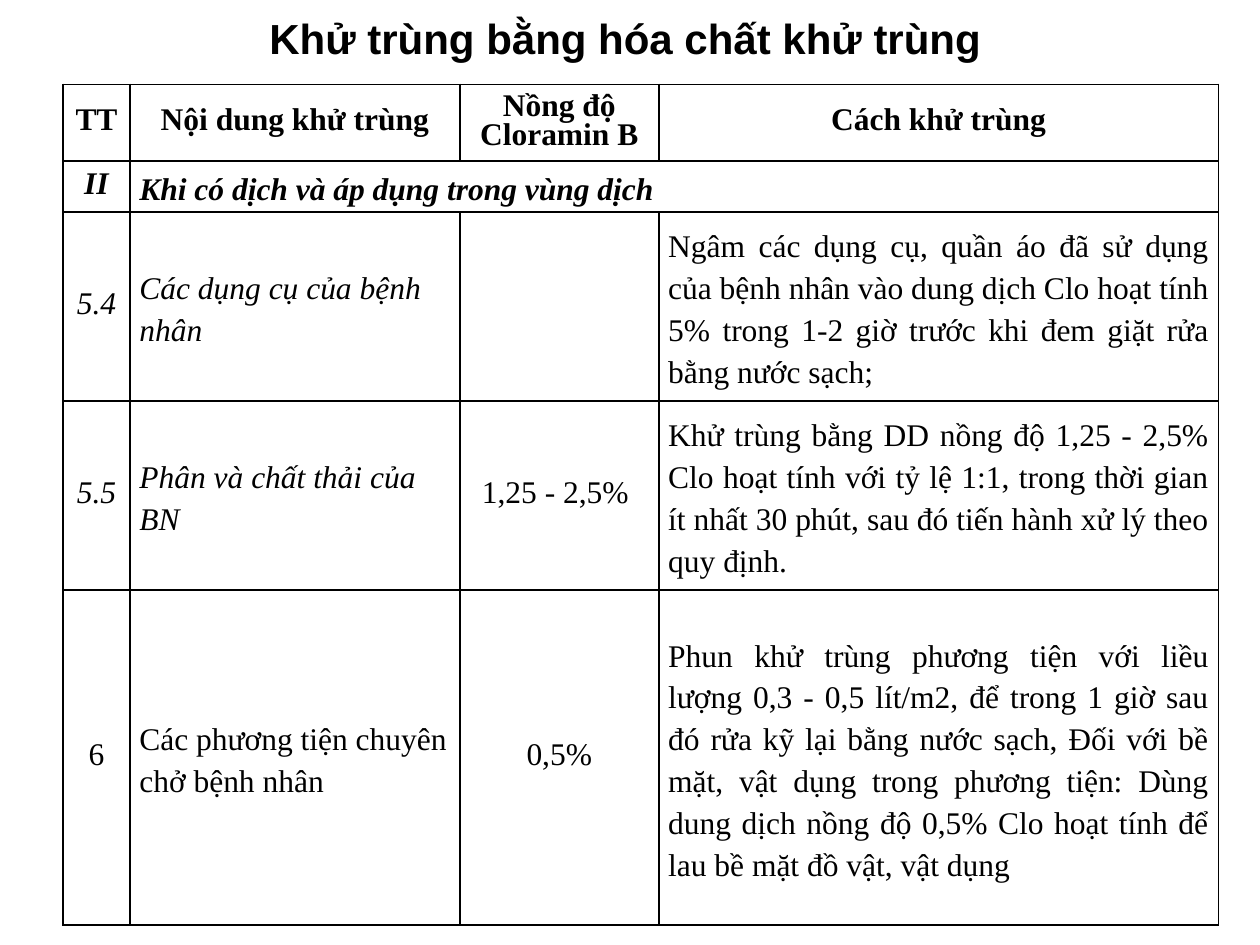
import dataclasses
import typing

import pptx
import pptx.dml.color
import pptx.enum.text
import pptx.oxml
import pptx.oxml.ns
import pptx.presentation
import pptx.slide
import pptx.table
import pptx.text.text
import pptx.util

Cm = pptx.util.Cm
Pt = pptx.util.Pt
Align = pptx.enum.text.PP_ALIGN
Anchor = pptx.enum.text.MSO_ANCHOR

BLACK = "000000"
WHITE = "FFFFFF"
COLUMN_WIDTHS = (1.35, 6.65, 4.01, 11.28)
ROW_HEIGHTS = (1.55, 1.02, 3.81, 3.81, 6.76)
CELL_FORMAT = {
    "margin_left": Cm(0.19),
    "margin_right": Cm(0.19),
    "margin_top": 0,
    "margin_bottom": 0,
    "vertical_anchor": Anchor.MIDDLE,
}
CENTERED = {"alignment": Align.CENTER, "line_spacing": Pt(17)}
LEFT = {"alignment": Align.LEFT, "line_spacing": 1.2}
JUSTIFIED = {"alignment": Align.JUSTIFY, "line_spacing": 1.2}
COLUMN_FORMATS = (CENTERED, LEFT, CENTERED, JUSTIFIED)


@dataclasses.dataclass(frozen=True)
class TableRow:
    texts: tuple[str, ...]
    bold: bool = False
    italic_columns: tuple[int, ...] = ()
    header: bool = False


ROWS = (
    TableRow(
        ("TT", "Nội dung khử trùng", "Nồng độ Cloramin B", "Cách khử trùng"),
        bold=True,
        header=True,
    ),
    TableRow(
        ("II", "Khi có dịch và áp dụng trong vùng dịch", "", ""),
        bold=True,
        italic_columns=(0, 1),
    ),
    TableRow(
        (
            "5.4",
            "Các dụng cụ của bệnh nhân",
            "",
            "Ngâm các dụng cụ, quần áo đã sử dụng của bệnh nhân vào dung dịch "
            "Clo hoạt tính 5% trong 1-2 giờ trước khi đem giặt rửa bằng nước sạch;",
        ),
        italic_columns=(0, 1),
    ),
    TableRow(
        (
            "5.5",
            "Phân và chất thải của BN",
            "1,25 - 2,5% ",
            "Khử trùng bằng DD nồng độ 1,25 - 2,5% Clo hoạt tính với tỷ lệ 1:1, "
            "trong thời gian ít nhất 30 phút, sau đó tiến hành xử lý theo quy định.",
        ),
        italic_columns=(0, 1),
    ),
    TableRow(
        (
            "6",
            "Các phương tiện chuyên chở bệnh nhân",
            "0,5%",
            "Phun khử trùng phương tiện với liều lượng 0,3 - 0,5 lít/m2, để trong "
            "1 giờ sau đó rửa kỹ lại bằng nước sạch, Đối với bề mặt, vật dụng trong "
            "phương tiện: Dùng dung dịch nồng độ 0,5% Clo hoạt tính để lau bề mặt "
            "đồ vật, vật dụng",
        ),
    ),
)


def set_attributes(target: typing.Any, values: dict[str, typing.Any]) -> None:
    for name, value in values.items():
        setattr(target, name, value)


def set_color(color_format: typing.Any, color: str) -> None:
    color_format.rgb = pptx.dml.color.RGBColor.from_string(color)


def write_text(
    paragraph: pptx.text.text._Paragraph,
    text: str,
    paragraph_format: dict[str, typing.Any],
    font_format: dict[str, typing.Any],
) -> None:
    set_attributes(paragraph, paragraph_format)
    run = paragraph.add_run()
    run.text = text
    set_attributes(run.font, font_format)
    set_color(run.font.color, BLACK)


def add_borders(cell: pptx.table._Cell) -> None:
    properties = cell._tc.get_or_add_tcPr()
    namespace = pptx.oxml.ns.nsdecls("a")
    for position, side in enumerate(("lnL", "lnR", "lnT", "lnB")):
        border = pptx.oxml.parse_xml(
            f'<a:{side} {namespace} w="{Pt(1)}"><a:solidFill>'
            f'<a:srgbClr val="{BLACK}"/></a:solidFill></a:{side}>'
        )
        properties.insert(position, border)


def add_title(slide: pptx.slide.Slide, text: str) -> None:
    title = slide.shapes.title
    set_attributes(
        title,
        {"left": Cm(0.64), "top": Cm(0.13), "width": Cm(23.93), "height": Cm(1.27)},
    )
    set_attributes(
        title.text_frame, {"vertical_anchor": Anchor.MIDDLE, "word_wrap": True}
    )
    write_text(
        title.text_frame.paragraphs[0],
        text,
        {"alignment": Align.CENTER},
        {"name": "Arial", "size": Pt(24), "bold": True},
    )


def fill_cell(cell: pptx.table._Cell, row: TableRow, column: int) -> None:
    set_attributes(cell, CELL_FORMAT)
    cell.fill.solid()
    set_color(cell.fill.fore_color, WHITE)
    add_borders(cell)
    if row.texts[column]:
        write_text(
            cell.text_frame.paragraphs[0],
            row.texts[column],
            CENTERED if row.header else COLUMN_FORMATS[column],
            {
                "name": "Times New Roman",
                "size": Pt(18),
                "bold": row.bold,
                "italic": column in row.italic_columns,
            },
        )


def add_disinfection_table(slide: pptx.slide.Slide) -> None:
    table = slide.shapes.add_table(
        len(ROWS),
        len(COLUMN_WIDTHS),
        Cm(1.27),
        Cm(1.7),
        Cm(sum(COLUMN_WIDTHS)),
        Cm(sum(ROW_HEIGHTS)),
    ).table
    set_attributes(table, {"first_row": False, "horz_banding": False})
    for column, width in zip(table.columns, COLUMN_WIDTHS):
        column.width = Cm(width)
    for table_row, height, row in zip(table.rows, ROW_HEIGHTS, ROWS):
        table_row.height = Cm(height)
        for column, cell in enumerate(table_row.cells):
            fill_cell(cell, row, column)
    table.cell(1, 1).merge(table.cell(1, 3))


def main() -> None:
    presentation = pptx.Presentation()
    set_attributes(
        presentation, {"slide_width": Cm(25.4), "slide_height": Cm(19.05)}
    )
    slide = presentation.slides.add_slide(presentation.slide_layouts[5])
    add_title(slide, "Khử trùng bằng hóa chất khử trùng")
    add_disinfection_table(slide)
    presentation.save("out.pptx")


if __name__ == "__main__":
    main()
